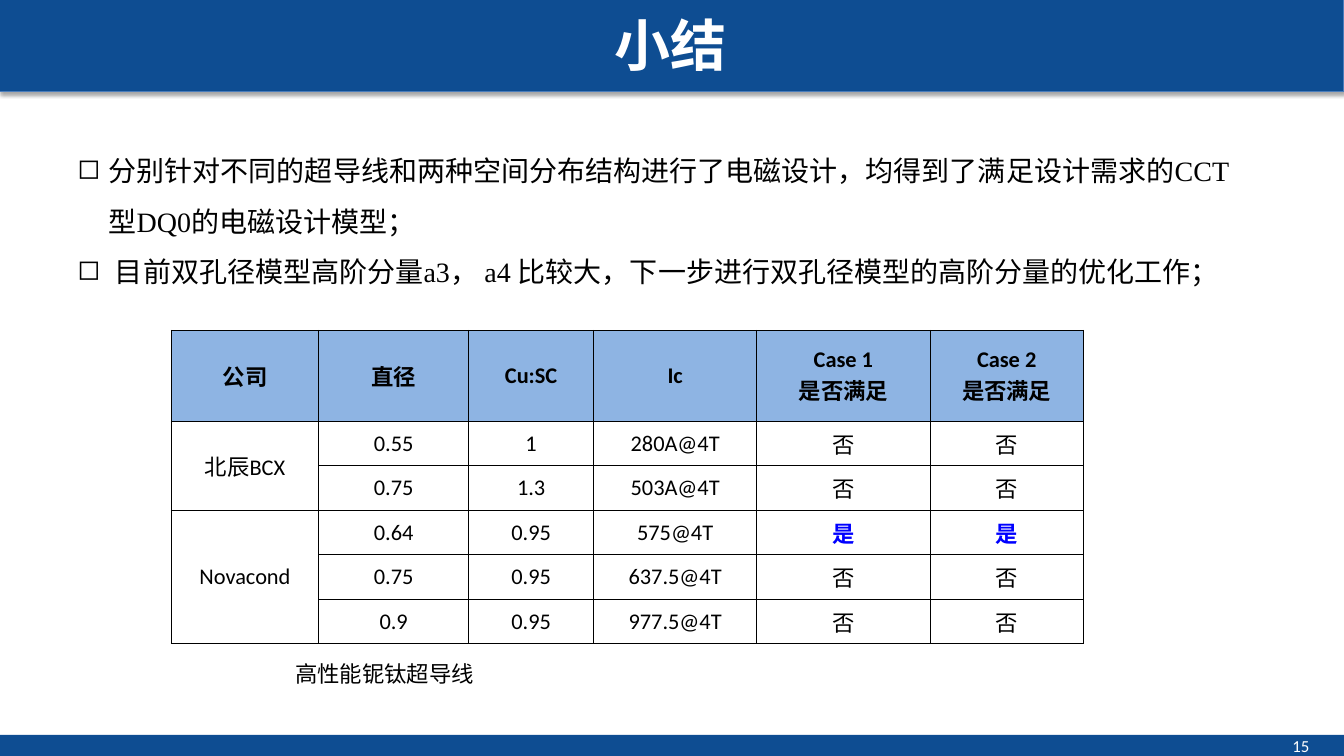
from dataclasses import dataclass
from pptx import Presentation
from pptx.dml.color import RGBColor
from pptx.enum.shapes import MSO_SHAPE
from pptx.enum.text import MSO_ANCHOR, PP_ALIGN
from pptx.oxml import parse_xml
from pptx.oxml.ns import nsdecls, qn
from pptx.util import Cm, Pt


@dataclass(frozen=True)
class Theme:
    """Colours, fonts and type sizes of the deck."""
    navy: str = "0E4D92"
    edge: str = "4B7EBC"
    sky: str = "8EB4E3"
    blue: str = "0000FF"
    black: str = "000000"
    white: str = "FFFFFF"
    sans: str = "Calibri"
    serif: str = "Times New Roman"
    head: str = "Arial"
    title: int = 40
    body: int = 20
    cell: int = 16
    note: int = 12


LOOK = Theme()
WIDE, HIGH = 33.87, 19.05
POINTS = [
    "分别针对不同的超导线和两种空间分布结构进行了电磁设计，均得到了满足设计需求的CCT型DQ0的电磁设计模型；",
    " 目前双孔径模型高阶分量a3， a4 比较大，下一步进行双孔径模型的高阶分量的优化工作；",
]
WIRES = [
    ["公司", "直径", "Cu:SC", "Ic", "Case 1\n是否满足", "Case 2\n是否满足"],
    ["北辰BCX", "0.55", "1", "280A@4T", "否", "否"],
    ["", "0.75", "1.3", "503A@4T", "否", "否"],
    ["Novacond", "0.64", "0.95", "575@4T", "是", "是"],
    ["", "0.75", "0.95", "637.5@4T", "否", "否"],
    ["", "0.9", "0.95", "977.5@4T", "否", "否"],
]
COLS = [3.71, 3.78, 3.15, 4.11, 4.37, 3.86]
ROWS = [2.29] + [1.12] * 5
GROUPS = [(1, 2), (3, 5)]


def write(frame, text, size=LOOK.cell, font=LOOK.sans, color=LOOK.black,
          bold=False, align=PP_ALIGN.LEFT, space=None, bullet=None):
    """Fill a text frame, one paragraph per line of text."""
    frame.word_wrap = True
    for num, line in enumerate(text.split("\n")):
        para = frame.paragraphs[0] if num == 0 else frame.add_paragraph()
        para.alignment = align
        if space:
            para.line_spacing = space
        if bullet:
            props = para._p.get_or_add_pPr()
            props.set("marL", str(Cm(0.79)))
            props.set("indent", str(-Cm(0.79)))
            props.append(parse_xml(f'<a:buChar {nsdecls("a")} char="{bullet}"/>'))
        run = para.add_run()
        run.text = line
        run.font.size, run.font.name, run.font.bold = Pt(size), font, bold
        run.font.color.rgb = RGBColor.from_string(color)


def add_text(slide, box, text, **style):
    """Place a text box and return its frame."""
    frame = slide.shapes.add_textbox(*map(Cm, box)).text_frame
    write(frame, text, **style)
    return frame


def add_band(slide, box):
    """Place a plain navy band."""
    band = slide.shapes.add_shape(MSO_SHAPE.RECTANGLE, *map(Cm, box))
    band.shadow.inherit = False
    band.fill.solid()
    band.fill.fore_color.rgb = RGBColor.from_string(LOOK.navy)
    band.line.fill.background()
    return band


def add_head(slide, box, text):
    """Place the shaded title band with the title on it."""
    left, top, width, height = box
    band = add_band(slide, box)
    band.line.color.rgb = RGBColor.from_string(LOOK.edge)
    band.line.width = Pt(0.75)
    band.element.spPr.find(qn("a:effectLst")).append(parse_xml(
        f'<a:outerShdw {nsdecls("a")} blurRad="{Pt(3.1)}" dist="{Pt(1.8)}" '
        f'dir="5400000" rotWithShape="0"><a:srgbClr val="{LOOK.black}">'
        '<a:alpha val="35000"/></a:srgbClr></a:outerShdw>'))
    title = slide.shapes.title
    title.left, title.top = Cm(left + 2.29), Cm(top)
    title.width, title.height = Cm(width - 4.66), Cm(height - 0.07)
    title.text_frame.vertical_anchor = MSO_ANCHOR.MIDDLE
    write(title.text_frame, text, size=LOOK.title, font=LOOK.head,
          color=LOOK.white, bold=True, align=PP_ALIGN.CENTER)
    band.element.addnext(title.element)


def add_foot(slide, box, text):
    """Place the bottom band with the page number."""
    left, top, width, height = box
    add_band(slide, box)
    frame = add_text(slide, (left + width - 6.54, top, 5.92, height), text,
                     size=LOOK.note, color=LOOK.white, align=PP_ALIGN.RIGHT)
    frame.margin_top, frame.margin_bottom = Cm(0.03), 0


def add_rules(cell):
    """Draw thin black lines on the four sides of a cell."""
    props = cell._tc.get_or_add_tcPr()
    for spot, side in enumerate("LRTB"):
        props.insert(spot, parse_xml(
            f'<a:ln{side} {nsdecls("a")} w="{Pt(1)}"><a:solidFill>'
            f'<a:srgbClr val="{LOOK.black}"/></a:solidFill></a:ln{side}>'))


def add_grid(slide, box):
    """Place the table of wires with its merged company cells."""
    grid = slide.shapes.add_table(len(ROWS), len(COLS), *map(Cm, box)).table
    grid.first_row = grid.horz_banding = False
    for col, width in zip(grid.columns, COLS):
        col.width = Cm(width)
    for row, height in zip(grid.rows, ROWS):
        row.height = Cm(height)
    for first, last in GROUPS:
        grid.cell(first, 0).merge(grid.cell(last, 0))
    for y, line in enumerate(WIRES):
        for x, text in enumerate(line):
            cell = grid.cell(y, x)
            cell.vertical_anchor = MSO_ANCHOR.MIDDLE
            if y == 0:
                cell.fill.solid()
                cell.fill.fore_color.rgb = RGBColor.from_string(LOOK.sky)
            else:
                cell.fill.background()
            add_rules(cell)
            if text:
                good = text == "是"
                write(cell.text_frame, text, bold=y == 0 or good,
                      color=LOOK.blue if good else LOOK.black,
                      align=PP_ALIGN.CENTER)


def main():
    """Build the summary slide and save it."""
    deck = Presentation()
    deck.slide_width, deck.slide_height = Cm(WIDE), Cm(HIGH)
    slide = deck.slides.add_slide(deck.slide_layouts[5])
    add_head(slide, (0, 0, WIDE, 2.31), "小结")
    add_foot(slide, (0, 18.52, WIDE, HIGH - 18.52), "15")
    add_text(slide, (7.19, 16.31, 6.35, 1.04), "高性能铌钛超导线",
             font=LOOK.serif, space=1.3)
    add_grid(slide, (4.32, 8.33, sum(COLS), sum(ROWS)))
    add_text(slide, (1.7, 3.33, 29.54, 3.94), "\n".join(POINTS),
             size=LOOK.body, font=LOOK.serif, space=1.5, bullet="◻")
    deck.save("out.pptx")


if __name__ == "__main__":
    main()
